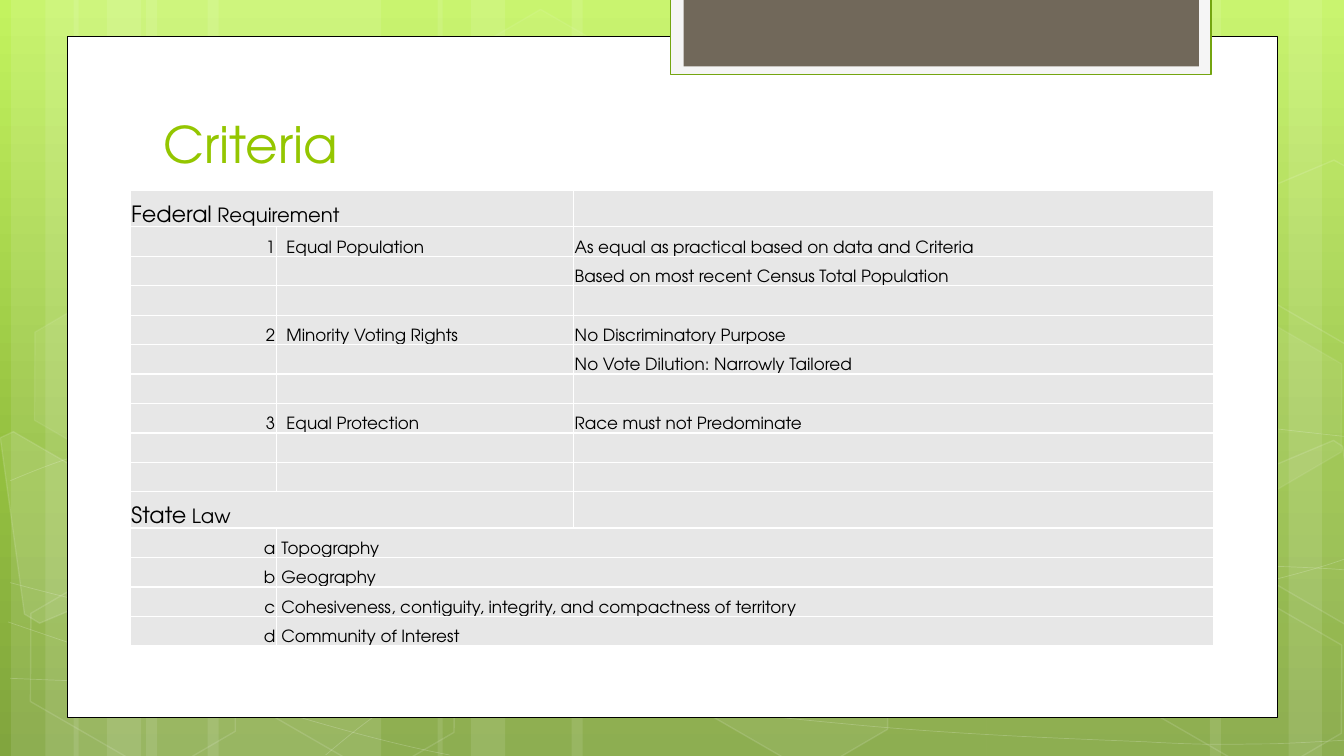
from copy import deepcopy
from dataclasses import dataclass
from math import cos, radians, sin

from lxml.etree import SubElement
from pptx import Presentation
from pptx.dml.color import RGBColor
from pptx.enum.shapes import MSO_SHAPE
from pptx.enum.text import MSO_ANCHOR, PP_ALIGN
from pptx.oxml.ns import qn
from pptx.util import Inches, Pt


@dataclass(frozen=True)
class Theme:
    font: str = "TeX Gyre Adventor"
    white: str = "FFFFFF"
    black: str = "000000"
    title: str = "94C600"
    cell: str = "E7E7E7"
    tab: str = "F5F5F5"
    tab_line: str = "74A510"
    tab_core: str = "71685A"
    sky: tuple = ((0, "C3F35F"), (0.62, "93BF3F"), (1, "81A53E"))
    title_size: int = 36
    lead_size: int = 16
    heading_size: int = 14
    body_size: int = 12


THEME = Theme()
TILT = 30

# Left edge and width of each full-height light band
BANDS = [(1.45, 2.33), (0.11, 0.67), (0.45, 1.11), (2.06, 2.33), (0.73, 0.67),
         (1.06, 1.11), (9.78, 2.33), (12.78, 0.67), (12, 1.11), (5.67, 4.11),
         (4.34, 0.67), (4.67, 1.11)]

# Each strand: start point, then cubic segments (two controls and an end) or line ends
STRANDS = [
    [(0.1, 6.73), (0.82, 6.76, 1.54, 6.79, 2.54, 6.78), (3.54, 6.77, 4.77, 6.75, 6.1, 6.65),
     (7.44, 6.55, 9.33, 6.36, 10.55, 6.17), (11.78, 5.98, 13.03, 5.68, 13.43, 5.51)],
    [(0.1, 4.77), (0.48, 4.61, 0.86, 4.46, 1.62, 4.31), (2.38, 4.16, 3.45, 3.94, 4.63, 3.87),
     (5.82, 3.8, 7.25, 3.79, 8.72, 3.87), (10.19, 3.95, 12.63, 4.26, 13.43, 4.34)],
    [(0.08, 6.17), (1.69, 6.72, 3.3, 7.27, 4.46, 7.49)],
    [(0.1, 5.78), (0.51, 5.89, 0.93, 6, 1.71, 6.16), (2.48, 6.31, 3.64, 6.56, 4.75, 6.73),
     (5.86, 6.9, 7.27, 7.08, 8.37, 7.18), (9.48, 7.29, 10.66, 7.33, 11.37, 7.36),
     (12.07, 7.4, 12.25, 7.38, 12.6, 7.38), (12.94, 7.37, 13.19, 7.35, 13.43, 7.34)],
    [(3.23, 7.49), (3.47, 7.29, 3.7, 7.09, 4.03, 6.91), (4.35, 6.73, 4.8, 6.53, 5.17, 6.39),
     (5.54, 6.25, 5.77, 6.19, 6.26, 6.09), (6.75, 5.99, 7.65, 5.85, 8.11, 5.78),
     (8.58, 5.71, 8.65, 5.71, 9.07, 5.69), (9.48, 5.66, 10.13, 5.63, 10.59, 5.62),
     (11.05, 5.61, 11.82, 5.62, 11.82, 5.62), (12.7, 5.62),
     (12.95, 5.63, 13.17, 5.64, 13.29, 5.65), (13.41, 5.66, 13.37, 5.65, 13.41, 5.66)],
]

# Left, top, fill opacity and line opacity in percent
HEXAGONS = [(4.45, 0.36, 4, 8), (6.62, 5.89, 6, 12), (0.15, 5.91, 0, 12),
            (0.19, 3.12, 7, 8), (2.32, 5.92, 0, 12), (11.12, 5.93, 0, 12),
            (11.12, 3.14, 7, 8)]

# Hexagons cut by the slide edge: fill opacity, centre and corners as seen
CUT_HEXAGONS = [
    (10, (0.48, 5.35),
     [(0, 4.34), (0.13, 4.28), (1.15, 4.87), (1.27, 5.81), (0.39, 6.18), (0.24, 6.09)]),
    (4, (13.13, 5.2),
     [(12.35, 4.74), (13.23, 4.37), (13.32, 4.43), (13.57, 6.25), (13.49, 6.28), (12.47, 5.69)]),
    (0, (13.13, 2.41),
     [(12.35, 1.96), (13.23, 1.59), (13.34, 1.65), (13.57, 3.46), (13.49, 3.5), (12.47, 2.91)]),
]

FEDERAL = [
    ("1", "Equal Population", "As equal as practical based on data and Criteria"),
    ("", "", "Based on most recent Census Total Population"),
    ("", "", ""),
    ("2", "Minority Voting Rights", "No Discriminatory Purpose"),
    ("", "", "No Vote Dilution: Narrowly Tailored"),
    ("", "", ""),
    ("3", "Equal Protection", "Race must not Predominate"),
    ("", "", ""),
    ("", "", ""),
]
STATE = [("a", "Topography"), ("b", "Geography"),
         ("c", "Cohesiveness, contiguity, integrity, and compactness of territory"),
         ("d", "Community of Interest")]


def rgb(color):
    return RGBColor.from_string(color)


def paint(fill, color, opacity=100):
    """Fill with a solid colour; zero opacity means no fill."""
    if not opacity:
        fill.background()
        return
    fill.solid()
    fill.fore_color.rgb = rgb(color)
    if opacity < 100:
        choice = next(fill._xPr.iter(qn("a:srgbClr")))
        SubElement(choice, qn("a:alpha"), val=str(opacity * 1000))


def style(shape, fill, opacity=100, line=None, width=1, line_opacity=100):
    shape.shadow.inherit = False
    paint(shape.fill, fill, opacity)
    if line:
        shape.line.width = Pt(width)
        paint(shape.line.fill, line, line_opacity)
    else:
        shape.line.fill.background()


def add_box(slide, box, kind=MSO_SHAPE.RECTANGLE):
    return slide.shapes.add_shape(kind, *map(Inches, box))


def add_outline(slide, points, close):
    corners = [(Inches(x), Inches(y)) for x, y in points]
    builder = slide.shapes.build_freeform(*corners[0])
    builder.add_line_segments(corners[1:], close=close)
    return builder.convert_to_shape()


def add_strand(slide, strand):
    """Draw the segment ends as an open outline, then bend its segments."""
    shape = add_outline(slide, [segment[-2:] for segment in strand], False)
    lines = list(shape.element.iter(qn("a:lnTo")))
    for line, segment in zip(lines, strand[1:]):
        if len(segment) == 2:
            continue
        curve = SubElement(line.getparent(), qn("a:cubicBezTo"))
        for x, y in zip(segment[::2], segment[1::2]):
            SubElement(curve, qn("a:pt"), x=str(Inches(x) - shape.left), y=str(Inches(y) - shape.top))
        line.getparent().replace(line, curve)
    return shape


def untilt(point, centre):
    """Turn a point back about the centre by the tilt of the hexagons."""
    dx, dy = point[0] - centre[0], point[1] - centre[1]
    c, s = cos(radians(TILT)), sin(radians(TILT))
    return centre[0] + c * dx + s * dy, centre[1] - s * dx + c * dy


def fill_background(slide):
    fill = slide.background.fill
    fill.gradient()
    fill.gradient_angle = 270
    stop_list = next(fill._xPr.iter(qn("a:gsLst")))
    stop_list.append(deepcopy(stop_list[-1]))
    for stop, (position, color) in zip(fill.gradient_stops, THEME.sky):
        stop.position = position
        stop.color.rgb = rgb(color)


def add_backdrop(slide, height):
    fill_background(slide)
    for left, width in BANDS:
        style(add_box(slide, (left, 0, width, height)), THEME.white, 10)
    for strand in STRANDS:
        style(add_strand(slide, strand), THEME.white, 0, THEME.white, 0.5, 20)
    for left, top, opacity, line_opacity in HEXAGONS:
        hexagon = add_box(slide, (left, top, 2.34, 1.52), MSO_SHAPE.HEXAGON)
        hexagon.adjustments[0] = 0.285
        hexagon.rotation = TILT
        style(hexagon, THEME.white, opacity, THEME.white, 1, line_opacity)
    for opacity, centre, corners in CUT_HEXAGONS:
        cut_hexagon = add_outline(slide, [untilt(corner, centre) for corner in corners], True)
        cut_hexagon.rotation = TILT
        style(cut_hexagon, THEME.white, opacity, THEME.white, 1, 12)


def add_panel(slide, box):
    """White page with the tab hanging over its top edge."""
    left, top, _, _ = box
    style(add_box(slide, box), THEME.white, line=THEME.black, width=0.5)
    tab_left, tab_top = left + 5.98, top - 0.38
    style(add_box(slide, (tab_left, tab_top, 5.36, 0.76)), THEME.tab, line=THEME.tab_line, width=1.25)
    style(add_box(slide, (tab_left + 0.13, tab_top, 5.11, 0.68)), THEME.tab_core)


def set_font(font, size, color=THEME.black):
    font.name, font.size, font.color.rgb = THEME.font, Pt(size), rgb(color)


def add_title(slide, box, text):
    title = slide.shapes.title
    title.left, title.top, title.width, title.height = map(Inches, box)
    title.text_frame.text = text
    title.text_frame.vertical_anchor = MSO_ANCHOR.TOP
    title.text_frame.margin_top = 0
    paragraph = title.text_frame.paragraphs[0]
    paragraph.alignment = PP_ALIGN.LEFT
    set_font(paragraph.font, THEME.title_size, THEME.title)
    title.element.getparent().append(title.element)  # bring in front of the panel


def write_cell(cell, text, align=PP_ALIGN.LEFT, indent=0.01):
    cell.margin_left = Inches(indent)
    paragraph = cell.text_frame.paragraphs[0]
    paragraph.alignment = align
    set_font(paragraph.font, THEME.body_size)
    if text:
        paragraph.add_run().text = text
    else:
        SubElement(paragraph._p, qn("a:endParaRPr"), sz=str(THEME.body_size * 100))


def write_heading(table, row, lead, rest):
    table.cell(row, 0).merge(table.cell(row, 1))
    paragraph = table.cell(row, 0).text_frame.paragraphs[0]
    for text, size in ((lead, THEME.lead_size), (rest, THEME.heading_size)):
        run = paragraph.add_run()
        run.text = text
        set_font(run.font, size)
    write_cell(table.cell(row, 2), "")


def add_criteria_table(slide, box):
    state_row = len(FEDERAL) + 1
    row_count = state_row + 1 + len(STATE)
    table = slide.shapes.add_table(row_count, 3, *map(Inches, box)).table
    table.first_row = table.horz_banding = False
    for column, width in zip(table.columns, (1.45, 2.95, 6.35)):
        column.width = Inches(width)
    heading_height = 0.36
    body_height = (box[3] - 2 * heading_height) / (row_count - 2)
    for index, row in enumerate(table.rows):
        row.height = Inches(heading_height if index in (0, state_row) else body_height)
    for cell in table.iter_cells():
        paint(cell.fill, THEME.cell)
        cell.vertical_anchor = MSO_ANCHOR.BOTTOM
        cell.margin_left = cell.margin_right = cell.margin_top = Inches(0.01)
        cell.margin_bottom = 0

    write_heading(table, 0, "Federal", " Requirement")
    for row, (number, name, rule) in enumerate(FEDERAL, 1):
        write_cell(table.cell(row, 0), number, PP_ALIGN.RIGHT)
        write_cell(table.cell(row, 1), name, indent=0.1)
        write_cell(table.cell(row, 2), rule)
    write_heading(table, state_row, "State", " Law")
    for row, (letter, name) in enumerate(STATE, state_row + 1):
        table.cell(row, 1).merge(table.cell(row, 2))
        write_cell(table.cell(row, 0), letter, PP_ALIGN.RIGHT)
        write_cell(table.cell(row, 1), name, indent=0.05)


def main():
    deck = Presentation()
    deck.slide_width, deck.slide_height = Inches(13.33), Inches(7.5)
    slide = deck.slides.add_slide(deck.slide_layouts[5])
    add_backdrop(slide, 7.5)
    add_panel(slide, (0.67, 0.36, 12, 6.76))
    add_title(slide, (1.52, 1.12, 10.24, 1.25), "Criteria")
    add_criteria_table(slide, (1.29, 1.89, 10.75, 4.52))
    deck.save("out.pptx")


if __name__ == "__main__":
    main()
